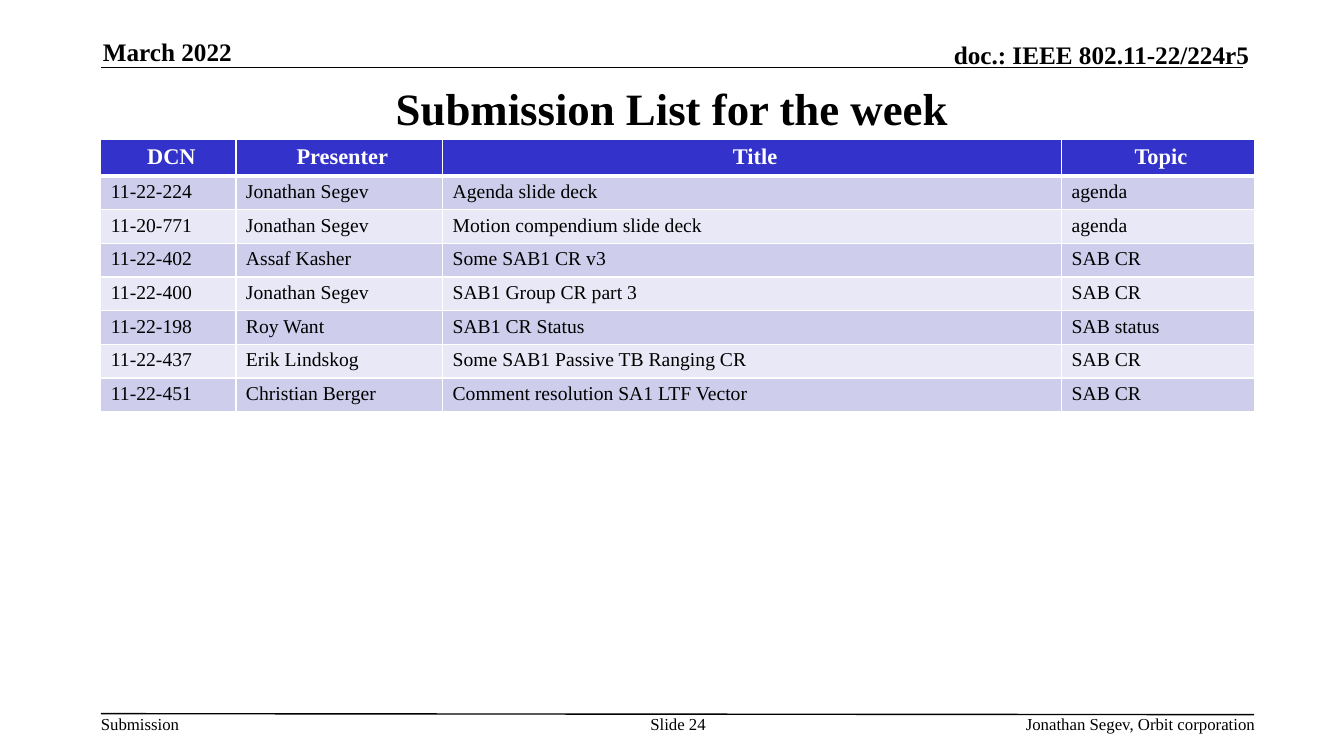
from lxml import etree
from pptx import Presentation
from pptx.dml.color import RGBColor
from pptx.enum.shapes import MSO_CONNECTOR
from pptx.enum.text import MSO_ANCHOR, PP_ALIGN
from pptx.oxml.ns import qn
from pptx.util import Inches, Pt

LEFT, CENTER, RIGHT = PP_ALIGN.LEFT, PP_ALIGN.CENTER, PP_ALIGN.RIGHT
TOP, MIDDLE, BOTTOM = MSO_ANCHOR.TOP, MSO_ANCHOR.MIDDLE, MSO_ANCHOR.BOTTOM
STRAIGHT = MSO_CONNECTOR.STRAIGHT

BLACK = RGBColor(0x00, 0x00, 0x00)
WHITE = RGBColor(0xFF, 0xFF, 0xFF)
HEADER_BLUE = RGBColor(0x33, 0x33, 0xCC)
BANDS = (RGBColor(0xCE, 0xCE, 0xEC), RGBColor(0xE8, 0xE8, 0xF6))
FONT = "Times New Roman"

# Content
HEADINGS = ("DCN", "Presenter", "Title", "Topic")
SUBMISSIONS = [
    ("11-22-224", "Jonathan Segev", "Agenda slide deck", "agenda"),
    ("11-20-771", "Jonathan Segev", "Motion compendium slide deck", "agenda"),
    ("11-22-402", "Assaf Kasher", "Some SAB1 CR v3", "SAB CR"),
    ("11-22-400", "Jonathan Segev", "SAB1 Group CR part 3", "SAB CR"),
    ("11-22-198", "Roy Want", "SAB1 CR Status", "SAB status"),
    ("11-22-437", "Erik Lindskog", "Some SAB1 Passive TB Ranging CR", "SAB CR"),
    ("11-22-451", "Christian Berger", "Comment resolution SA1 LTF Vector", "SAB CR"),
]
COLUMN_WIDTHS = (1.34, 2.05, 6.14, 1.91)
HEADER_HEIGHT, ROW_HEIGHT = 0.35, 0.31

HEADER_STYLE = dict(size=18, bold=True, anchor=BOTTOM)
TITLE_STYLE = dict(size=32, bold=True, anchor=MIDDLE, align=CENTER)
# text, (left, top, width, height), format
TEXTS = [
    ("March 2022", (1.02, 0.36, 2.73, 0.3), HEADER_STYLE),
    ("doc.: IEEE 802.11-22/224r5", (7.29, 0.39, 5.1, 0.3),
     dict(HEADER_STYLE, align=RIGHT)),
    ("Submission List for the week", (1, 0.75, 11.33, 0.64), TITLE_STYLE),
    ("Submission", (1, 7.08, 0.79, 0.2), dict(wrap=False)),
    ("Slide 24", (6.34, 7.08, 0.77, 0.4), dict(align=CENTER)),
    ("Jonathan Segev, Orbit corporation", (7.81, 7.08, 4.64, 0.2),
     dict(align=RIGHT)),
]
# start x, start y, end x, end y
RULES = [(1, 0.67, 12.33, 0.67), (1, 7.08, 12.44, 7.09)]


def write(frame, text, size=12, bold=False, color=BLACK, align=LEFT):
    para = frame.paragraphs[0]
    para.alignment = align
    span = para.add_run()
    span.text = text
    span.font.name = FONT
    span.font.size = Pt(size)
    span.font.bold = bold
    span.font.color.rgb = color


def add_text(page, text, place, anchor=TOP, wrap=True, **style):
    box = page.shapes.add_textbox(*map(Inches, place))
    frame = box.text_frame
    frame.word_wrap = wrap
    frame.vertical_anchor = anchor
    frame.margin_left = frame.margin_right = 0
    frame.margin_top = frame.margin_bottom = 0
    write(frame, text, **style)


def add_rule(page, ends):
    rule = page.shapes.add_connector(STRAIGHT, *map(Inches, ends))
    rule.line.color.rgb = BLACK
    rule.line.width = Pt(1)
    etree.SubElement(rule._element.spPr, qn("a:effectLst"))


def set_borders(cell, widths):
    properties = cell._tc.get_or_add_tcPr()
    for position, (side, width) in enumerate(widths.items()):
        border = etree.Element(qn("a:" + side), w=str(Pt(width)))
        fill = etree.SubElement(border, qn("a:solidFill"))
        etree.SubElement(fill, qn("a:srgbClr"), val=str(WHITE))
        properties.insert(position, border)


def add_submission_table(page):
    rows = [HEADINGS] + SUBMISSIONS
    height = HEADER_HEIGHT + ROW_HEIGHT * len(SUBMISSIONS)
    place = map(Inches, (1, 1.38, sum(COLUMN_WIDTHS), height))
    table = page.shapes.add_table(len(rows), len(HEADINGS), *place).table
    for column, width in zip(table.columns, COLUMN_WIDTHS):
        column.width = Inches(width)
    for number, values in enumerate(rows):
        header = number == 0
        table.rows[number].height = Inches(HEADER_HEIGHT if header else ROW_HEIGHT)
        if header:
            style = dict(size=16, bold=True, color=WHITE, align=CENTER)
        else:
            style = dict(size=14)
        for index, text in enumerate(values):
            cell = table.cell(number, index)
            cell.margin_left = Inches(0.1)
            cell.margin_right = Inches(0.04 if header else 0.1)
            cell.margin_top = cell.margin_bottom = Inches(0.05)
            cell.fill.solid()
            cell.fill.fore_color.rgb = HEADER_BLUE if header else BANDS[(number - 1) % 2]
            set_borders(cell, {"lnL": 1, "lnR": 1, "lnT": 3 if number == 1 else 1,
                               "lnB": 3 if header else 1})
            write(cell.text_frame, text, **style)


def main():
    deck = Presentation()
    deck.slide_width, deck.slide_height = Inches(13.33), Inches(7.5)
    page = deck.slides.add_slide(deck.slide_layouts[6])

    # Header and footer rules
    for ends in RULES:
        add_rule(page, ends)

    # Title, header and footer texts
    for text, place, style in TEXTS:
        add_text(page, text, place, **style)

    # Submission list
    add_submission_table(page)
    deck.save("out.pptx")


if __name__ == "__main__":
    main()
